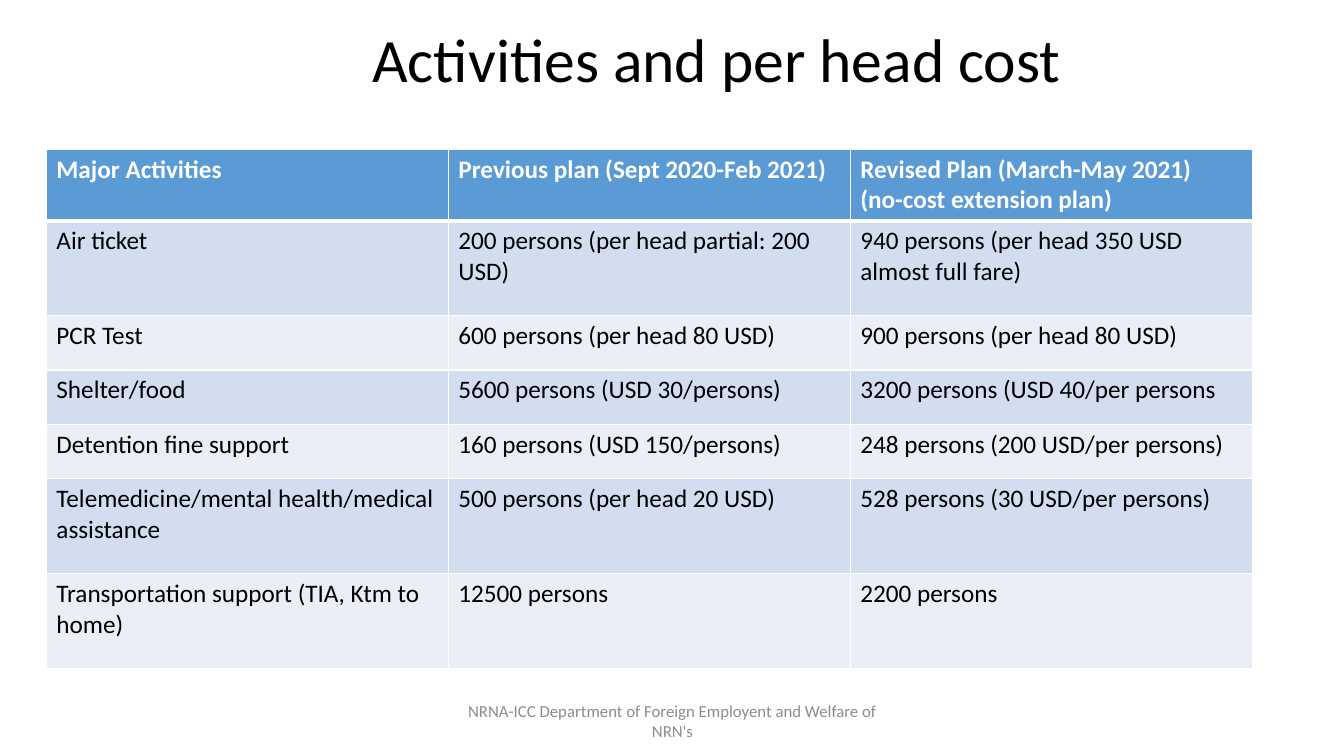
from lxml.etree import SubElement as Sub
from pptx import Presentation
from pptx.dml.color import RGBColor as RGB
from pptx.enum.text import MSO_ANCHOR as Anchor, PP_ALIGN as Align
from pptx.oxml.ns import qn
from pptx.util import Inches, Pt

HUES = {"head": "5B9BD5", "odd": "D2DEEF", "even": "EAEFF7",
        "white": "FFFFFF", "black": "000000", "gray": "8C8C8C"}

ROWS = [
    ("Major Activities", "Previous plan (Sept 2020-Feb 2021)",
     "Revised Plan (March-May 2021)\n(no-cost extension plan)"),
    ("Air ticket", "200 persons (per head partial: 200 USD)",
     "940 persons (per head 350 USD almost full fare)"),
    ("PCR Test", "600 persons (per head 80 USD)", "900 persons (per head 80 USD)"),
    ("Shelter/food", "5600 persons (USD 30/persons)", "3200 persons (USD 40/per persons"),
    ("Detention fine support", "160 persons (USD 150/persons)",
     "248 persons (200 USD/per persons)"),
    ("Telemedicine/mental health/medical assistance", "500 persons (per head 20 USD)",
     "528 persons (30 USD/per persons)"),
    ("Transportation support (TIA, Ktm to home)", "12500 persons", "2200 persons"),
]
LOW, TALL = 0.54, 0.94
HIGHS = [LOW, TALL, LOW, LOW, LOW, TALL, TALL]


class Deck:
    face = "Calibri"

    def __init__(self):
        self.prs = Presentation()
        self.prs.slide_width, self.prs.slide_height = Inches(13.33), Inches(7.5)
        self.slide = self.prs.slides.add_slide(self.prs.slide_layouts[5])

    def label(self, frame, text, size, hue, bold=False, **form):
        frame.text = text
        for para in frame.paragraphs:
            for key, val in form.items():
                setattr(para, key, val)
            font = {"name": self.face, "size": Pt(size), "bold": bold}
            for key, val in font.items():
                setattr(para.font, key, val)
            para.font.color.rgb = RGB.from_string(HUES[hue])

    def place(self, shape, *box):
        for key, val in zip(("left", "top", "width", "height"), box):
            setattr(shape, key, Inches(val))

    def title(self, text, *box):
        shape = self.slide.shapes.title
        self.place(shape, *box)
        shape.text_frame.vertical_anchor = Anchor.MIDDLE
        self.label(shape.text_frame, text, 44, "black",
                   alignment=Align.CENTER, line_spacing=0.9)

    def note(self, text, *box):
        shape = self.slide.shapes.add_textbox(*map(Inches, box))
        frame = shape.text_frame
        frame.word_wrap, frame.vertical_anchor = True, Anchor.MIDDLE
        self.label(frame, text, 12, "gray", alignment=Align.CENTER)

    def edge(self, cell, sides):
        # Borders must come before the fill in the cell properties
        props = cell._tc.get_or_add_tcPr()
        for side, width in sides.items():
            line = Sub(props, qn(f"a:ln{side}"), w=str(Pt(width)))
            fill = Sub(line, qn("a:solidFill"))
            Sub(fill, qn("a:srgbClr"), val=HUES["white"])

    def table(self, rows, highs, *box):
        size = len(rows), len(rows[0])
        grid = self.slide.shapes.add_table(*size, *map(Inches, box)).table
        for col in grid.columns:
            col.width = Inches(box[2] / size[1])
        for r, (row, high) in enumerate(zip(rows, highs)):
            grid.rows[r].height = Inches(high)
            head = r == 0
            fill = "head" if head else "odd" if r % 2 else "even"
            for c, text in enumerate(row):
                cell = grid.cell(r, c)
                self.edge(cell, {"L": 1, "R": 1, "T": 3 if r == 1 else 1,
                                 "B": 3 if head else 1})
                cell.fill.solid()
                cell.fill.fore_color.rgb = RGB.from_string(HUES[fill])
                self.label(cell.text_frame, text, 18,
                           "white" if head else "black", bold=head)


def main():
    deck = Deck()
    # Heading
    deck.title("Activities and per head cost ", 1.43, 0.17, 11.5, 0.91)
    # Cost table
    deck.table(ROWS, HIGHS, 0.46, 1.48, 11.96, sum(HIGHS))
    # Footer
    deck.note("NRNA-ICC Department of Foreign Employent and Welfare of NRN's",
              4.42, 6.95, 4.5, 0.4)
    deck.prs.save("out.pptx")


if __name__ == "__main__":
    main()
